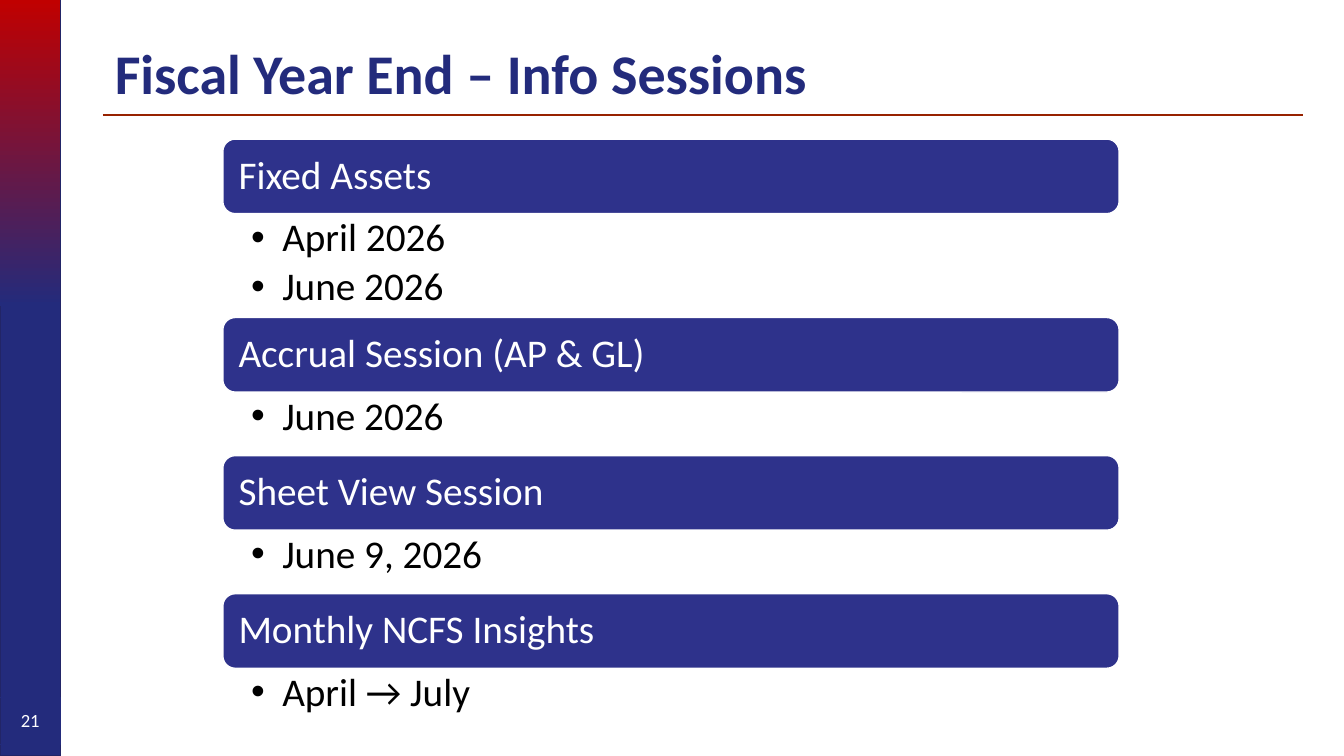
"""Build the slide listing the fiscal year end info sessions."""
from lxml.etree import SubElement
from pptx import Presentation
from pptx.dml.color import RGBColor
from pptx.enum.shapes import MSO_CONNECTOR, MSO_SHAPE
from pptx.enum.text import MSO_ANCHOR, PP_ALIGN
from pptx.oxml.ns import qn
from pptx.util import Inches, Pt

NAVY = RGBColor(0x23, 0x2B, 0x7C)
NAVY_EDGE = RGBColor(0x22, 0x25, 0x67)
INDIGO = RGBColor(0x2E, 0x32, 0x8B)
RED = RGBColor(0xC0, 0x00, 0x00)
RULE_RED = RGBColor(0x97, 0x22, 0x00)
WHITE = RGBColor(0xFF, 0xFF, 0xFF)
BLACK = RGBColor(0x00, 0x00, 0x00)

SLIDE_WIDTH, SLIDE_HEIGHT = 13.33, 7.5
BAND_WIDTH = 0.6
LIST_LEFT, LIST_TOP, LIST_WIDTH = 2.21, 1.38, 8.89
HEADER_HEIGHT = 0.74
DATES_HEIGHT = {1: 0.63, 2: 1.03}
BULLET_INDENT = 0.31

SESSIONS = [
    ("Fixed Assets", ["April 2026", "June 2026"]),
    ("Accrual Session (AP & GL)", ["June 2026"]),
    ("Sheet View Session", ["June 9, 2026"]),
    ("Monthly NCFS Insights", ["April → July"]),
]

presentation = Presentation()
presentation.slide_width = Inches(SLIDE_WIDTH)
presentation.slide_height = Inches(SLIDE_HEIGHT)
slide = presentation.slides.add_slide(presentation.slide_layouts[6])


def add_box(kind, left, top, width, height):
    """Add a shape, or a text box when kind is None, measured in inches."""
    area = [Inches(value) for value in (left, top, width, height)]
    if kind is None:
        return slide.shapes.add_textbox(*area)
    shape = slide.shapes.add_shape(kind, *area)
    shape.shadow.inherit = False
    return shape


def write(shape, lines, size, color, insets=(0.1, 0.05, 0.1, 0.05),
          anchor=MSO_ANCHOR.MIDDLE, align=PP_ALIGN.LEFT, bold=False, bulleted=False):
    """Fill a shape with one paragraph for each line."""
    frame = shape.text_frame
    frame.word_wrap = True
    frame.vertical_anchor = anchor
    for side, inset in zip(("left", "top", "right", "bottom"), insets):
        setattr(frame, f"margin_{side}", Inches(inset))
    for index, line in enumerate(lines):
        paragraph = frame.add_paragraph() if index else frame.paragraphs[0]
        paragraph.text = line
        paragraph.alignment = align
        paragraph.line_spacing = 0.9
        if bulleted:
            paragraph.space_after = Pt(5)
            properties = paragraph._p.get_or_add_pPr()
            properties.set("marL", str(Inches(BULLET_INDENT)))
            properties.set("indent", str(-Inches(BULLET_INDENT)))
            SubElement(properties, qn("a:buFont")).set("typeface", "Arial")
            SubElement(properties, qn("a:buChar")).set("char", "•")
        font = paragraph.runs[0].font
        for name, value in {"name": "Calibri", "size": Pt(size), "bold": bold}.items():
            setattr(font, name, value)
        font.color.rgb = color


band = add_box(MSO_SHAPE.RECTANGLE, 0, 0, BAND_WIDTH, SLIDE_HEIGHT)
band.fill.solid()
band.fill.fore_color.rgb = NAVY
band.line.color.rgb = NAVY_EDGE
band.line.width = Pt(1)

fade = add_box(MSO_SHAPE.RECTANGLE, 0, 0, BAND_WIDTH, 3.04)
fade.fill.gradient()
fade.fill.gradient_angle = 270
for stop, color in zip(fade.fill.gradient_stops, (RED, NAVY)):
    stop.color.rgb = color
fade.line.fill.background()

rule = slide.shapes.add_connector(
    MSO_CONNECTOR.STRAIGHT, Inches(1.02), Inches(1.14), Inches(12.92), Inches(1.14))
rule.line.color.rgb = RULE_RED
rule.line.width = Pt(1.5)
SubElement(rule._element.spPr, qn("a:effectLst"))

page_number = add_box(MSO_SHAPE.RECTANGLE, 0, 6.92, BAND_WIDTH, 0.47)
page_number.fill.background()
page_number.line.color.rgb = NAVY
page_number.line.width = Pt(0.75)
write(page_number, ["21"], 13.3, WHITE, align=PP_ALIGN.CENTER)

title = add_box(None, 1.04, 0.41, 12, 0.69)
write(title, ["Fiscal Year End – Info Sessions"], 40, NAVY, bold=True)

top = LIST_TOP
for session, dates in SESSIONS:
    header = add_box(MSO_SHAPE.ROUNDED_RECTANGLE, LIST_LEFT, top, LIST_WIDTH, HEADER_HEIGHT)
    header.fill.solid()
    header.fill.fore_color.rgb = INDIGO
    header.line.color.rgb = WHITE
    header.line.width = Pt(1)
    write(header, [session], 28, WHITE, insets=(0.12, 0.12, 0.12, 0.12))
    top += HEADER_HEIGHT

    date_list = add_box(None, LIST_LEFT, top, LIST_WIDTH, DATES_HEIGHT[len(dates)])
    write(date_list, dates, 28, BLACK, insets=(0.28, 0.04, 0.22, 0.04),
          anchor=MSO_ANCHOR.TOP, bulleted=True)
    top += DATES_HEIGHT[len(dates)]

presentation.save("out.pptx")
